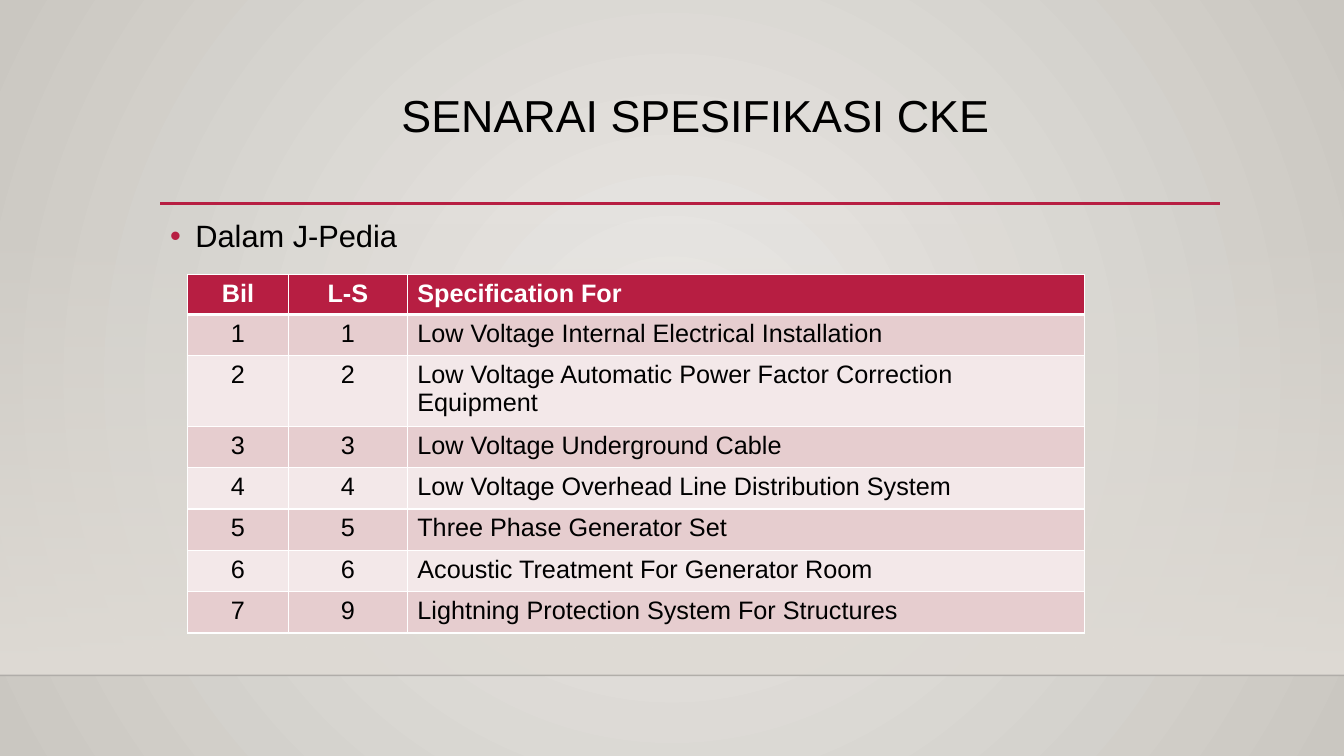
from pptx import Presentation
from pptx.dml.color import RGBColor
from pptx.enum import shapes, text
from pptx.oxml import parse_xml
from pptx.oxml.ns import nsdecls, qn
from pptx.util import Inches, Pt

# Content
TITLE = "SENARAI SPESIFIKASI CKE"
BULLET = "Dalam J-Pedia"
HEADER = ("Bil", "L-S", "Specification For")
ROWS = [
    ("1", "1", "Low Voltage Internal Electrical Installation"),
    ("2", "2", "Low Voltage Automatic Power Factor Correction Equipment"),
    ("3", "3", "Low Voltage Underground Cable"),
    ("4", "4", "Low Voltage Overhead Line Distribution System"),
    ("5", "5", "Three Phase Generator Set"),
    ("6", "6", "Acoustic Treatment For Generator Room"),
    ("7", "9", "Lightning Protection System For Structures"),
]
COL_WIDTHS = (1, 1.18, 6.72)
HEADER_H, ROW_H, TALL_ROW_H = 0.38, 0.41, 0.65
TALL_ROW = 2


class Theme:
    font = "Arial"
    title, body, cell = 32, 22, 18
    accent, ink, white = "B71E42", "000000", "FFFFFF"
    bands = ("E6CDCF", "F3E8E9")
    glow, edge, floor, floor_line = "ECEAE7", "CAC7C1", "DFDBD5", "000001"


CENTER, LEFT = text.PP_ALIGN.CENTER, text.PP_ALIGN.LEFT


def rgb(value):
    return RGBColor.from_string(value)


def set_alpha(color_el, percent):
    color_el.append(parse_xml(f'<a:alpha {nsdecls("a")} val="{percent * 1000}"/>'))


def set_gradient(fill, owner, colors):
    fill.gradient()
    for stop, color in zip(fill.gradient_stops, colors):
        stop.color.rgb = rgb(color)
    return owner.find(".//" + qn("a:gradFill"))


def write(tf, words, size, color=Theme.ink, bold=False, align=LEFT, spacing=None, bullet=None):
    tf.word_wrap = True
    p = tf.paragraphs[0]
    p.alignment = align
    if spacing:
        p.line_spacing = spacing
    if bullet:
        pPr = p._p.get_or_add_pPr()
        pPr.set("marL", str(Inches(0.25)))
        pPr.set("indent", str(Inches(-0.25)))
        pPr.append(parse_xml(f'<a:buClr {nsdecls("a")}><a:srgbClr val="{bullet}"/></a:buClr>'))
        pPr.append(parse_xml(f'<a:buFont {nsdecls("a")} typeface="{Theme.font}"/>'))
        pPr.append(parse_xml(f'<a:buChar {nsdecls("a")} char="•"/>'))
    r = p.add_run()
    r.text = words
    r.font.name, r.font.size, r.font.bold = Theme.font, Pt(size), bold
    r.font.color.rgb = rgb(color)


def add_line(slide, x1, x2, y, color, width):
    line = slide.shapes.add_connector(
        shapes.MSO_CONNECTOR.STRAIGHT, Inches(x1), Inches(y), Inches(x2), Inches(y))
    line.line.color.rgb = rgb(color)
    line.line.width = Pt(width)
    line._element.spPr.append(parse_xml(f'<a:effectLst {nsdecls("a")}/>'))
    return line


def add_borders(cell, bottom):
    tcPr = cell._tc.get_or_add_tcPr()
    for i, (side, width) in enumerate((("L", 1), ("R", 1), ("T", 1), ("B", bottom))):
        tcPr.insert(i, parse_xml(
            f'<a:ln{side} {nsdecls("a")} w="{Pt(width)}"><a:solidFill>'
            f'<a:srgbClr val="{Theme.white}"/></a:solidFill></a:ln{side}>'))


def add_backdrop(slide):
    # Radial background
    grad = set_gradient(slide.background.fill, slide._element, (Theme.glow, Theme.edge))
    grad.remove(grad.find(qn("a:lin")))
    grad.append(parse_xml(
        f'<a:path {nsdecls("a")} path="circle">'
        '<a:fillToRect l="50000" t="50000" r="50000" b="50000"/></a:path>'))

    # Fading floor and its edge
    sp = slide.shapes.add_shape(
        shapes.MSO_SHAPE.RECTANGLE, 0, Inches(2.21), Inches(13.33), Inches(4.49))
    sp.shadow.inherit = False
    sp.line.fill.background()
    grad = set_gradient(sp.fill, sp._element, (Theme.floor, Theme.floor))
    sp.fill.gradient_angle = 270
    set_alpha(grad.find(".//" + qn("a:srgbClr")), 0)
    edge = add_line(slide, 0, 13.33, 6.7, Theme.floor_line, 1)
    set_alpha(edge._element.spPr.find(".//" + qn("a:srgbClr")), 20)


def add_spec_table(slide):
    heights = [HEADER_H] + [ROW_H] * len(ROWS)
    heights[TALL_ROW] = TALL_ROW_H
    frame = slide.shapes.add_table(
        len(heights), len(COL_WIDTHS), Inches(1.86), Inches(2.72),
        Inches(sum(COL_WIDTHS)), Inches(sum(heights)))
    table = frame.table
    for col, width in zip(table.columns, COL_WIDTHS):
        col.width = Inches(width)
    for i, values in enumerate([HEADER] + ROWS):
        table.rows[i].height = Inches(heights[i])
        head = i == 0
        for j, value in enumerate(values):
            cell = table.cell(i, j)
            cell.fill.solid()
            cell.fill.fore_color.rgb = rgb(Theme.accent if head else Theme.bands[(i - 1) % 2])
            add_borders(cell, 3 if head else 1)
            write(cell.text_frame, value, Theme.cell, bold=head,
                  color=Theme.white if head else Theme.ink,
                  align=CENTER if j < 2 else LEFT)


def main():
    prs = Presentation()
    prs.slide_width, prs.slide_height = Inches(13.33), Inches(7.5)
    slide = prs.slides.add_slide(prs.slide_layouts[6])
    add_backdrop(slide)

    # Title, rule and bullet
    add_line(slide, 1.59, 12.1, 2.02, Theme.accent, 2.5)
    title = slide.shapes.add_textbox(Inches(1.65), Inches(0.88), Inches(10.5), Inches(1.15))
    write(title.text_frame, TITLE, Theme.title, align=CENTER, spacing=0.9)
    body = slide.shapes.add_textbox(Inches(1.59), Inches(2.03), Inches(10.5), Inches(0.6))
    write(body.text_frame, BULLET, Theme.body, spacing=1.2, bullet=Theme.accent)

    add_spec_table(slide)
    prs.save("out.pptx")


if __name__ == "__main__":
    main()
